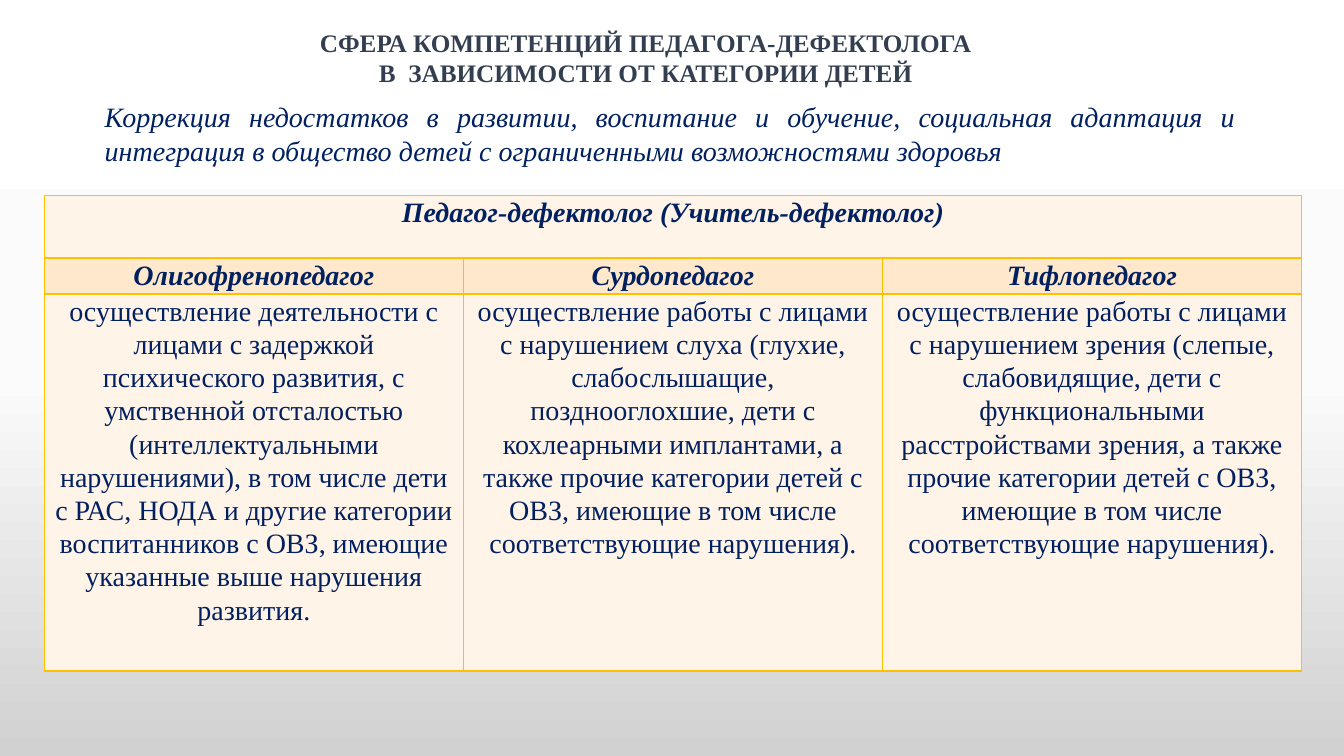
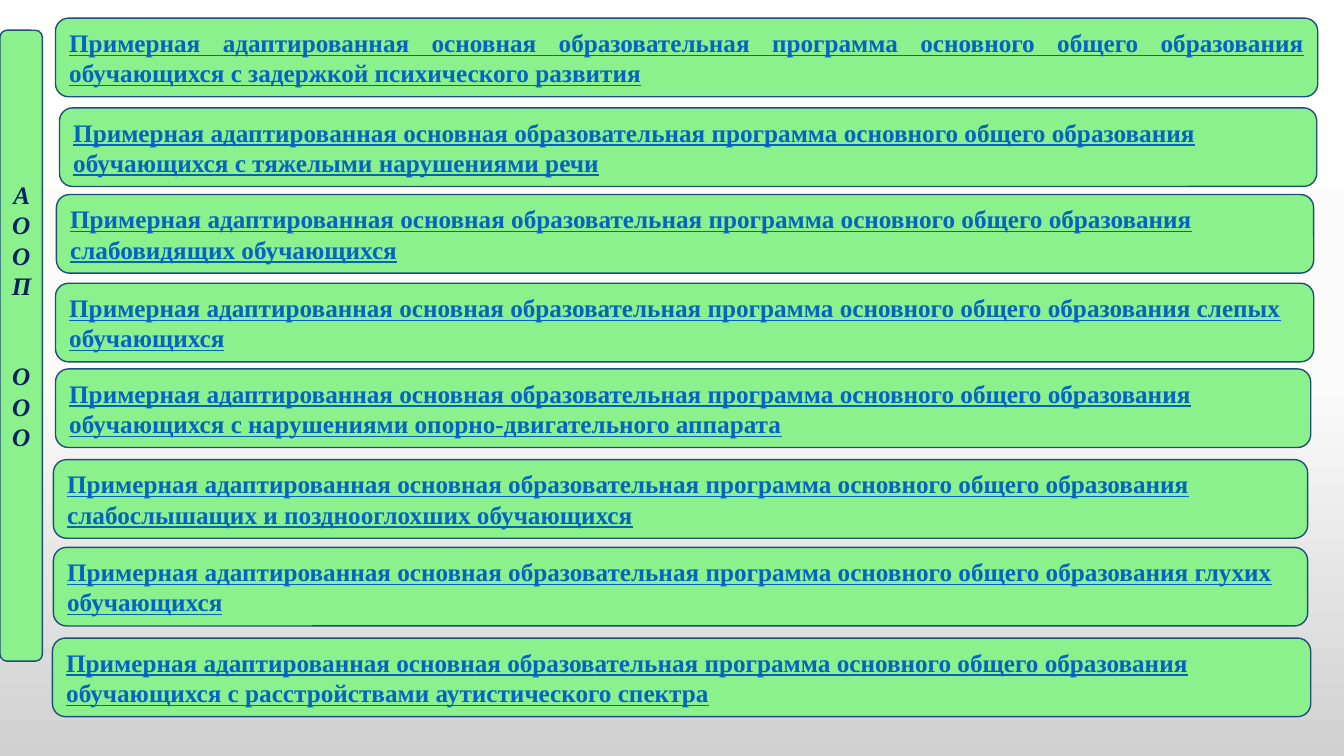
from copy import deepcopy

from lxml.etree import SubElement
from pptx import Presentation
from pptx.dml.color import RGBColor
from pptx.enum.shapes import MSO_SHAPE
from pptx.enum.text import MSO_ANCHOR, PP_ALIGN
from pptx.oxml.ns import qn
from pptx.util import Inches, Pt

FONT = "Times New Roman"
NAVY = RGBColor(0x00, 0x20, 0x60)
SLATE = RGBColor(0x33, 0x3F, 0x50)
LINK_BLUE = RGBColor(0x05, 0x63, 0xC1)
GREEN = RGBColor(0x8B, 0xF1, 0x8D)
OUTLINE = RGBColor(0x1F, 0x4E, 0x79)
GOLD = RGBColor(0xFF, 0xC0, 0x00)
CREAM = RGBColor(0xFF, 0xF4, 0xE7)
PEACH = RGBColor(0xFF, 0xE8, 0xCC)
BACKDROP = [
    (0, RGBColor(0xFF, 0xFF, 0xFF)),
    (0.5, RGBColor(0xFB, 0xFB, 0xFB)),
    (1, RGBColor(0xD1, 0xD1, 0xD1)),
]


def write(paragraph, text, size=18, color=NAVY, bold=False, italic=False,
          underline=False, align=PP_ALIGN.LEFT, line_spacing=None):
    paragraph.alignment = align
    paragraph.line_spacing = line_spacing
    run = paragraph.add_run()
    run.text = text
    font = run.font
    font.name, font.size, font.color.rgb = FONT, Pt(size), color
    font.bold, font.italic, font.underline = bold, italic, underline


def add_panel(slide, left, top, width, height):
    """Add a green rounded panel and return its text frame."""
    shape = slide.shapes.add_shape(
        MSO_SHAPE.ROUNDED_RECTANGLE,
        Inches(left), Inches(top), Inches(width), Inches(height))
    shape.shadow.inherit = False
    shape.fill.solid()
    shape.fill.fore_color.rgb = GREEN
    shape.line.color.rgb = OUTLINE
    shape.line.width = Pt(1)
    frame = shape.text_frame
    frame.word_wrap = True
    frame.vertical_anchor = MSO_ANCHOR.MIDDLE
    return frame


presentation = Presentation()
presentation.slide_width = Inches(13.33)
presentation.slide_height = Inches(7.5)
blank = presentation.slide_layouts[6]

# Shared background gradient
master = presentation.slide_master
backdrop = master.background.fill
backdrop.gradient()
backdrop.gradient_angle = 270
stop_list = next(master.element.iter(qn("a:gsLst")))
stop_list.insert(1, deepcopy(stop_list[0]))
for stop, (position, color) in zip(backdrop.gradient_stops, BACKDROP):
    stop.position = position
    stop.color.rgb = color

# Slide 1: competences by category of children
slide = presentation.slides.add_slide(blank)
headings = [
    ((3.07, 0.22, 6.67, 0.71),
     "СФЕРА КОМПЕТЕНЦИЙ ПЕДАГОГА-ДЕФЕКТОЛОГА В  ЗАВИСИМОСТИ ОТ КАТЕГОРИИ ДЕТЕЙ",
     dict(color=SLATE, bold=True, align=PP_ALIGN.CENTER)),
    ((0.94, 0.94, 11.41, 0.77),
     "Коррекция недостатков в развитии, воспитание и обучение, социальная "
     "адаптация и интеграция в общество детей с ограниченными возможностями "
     "здоровья",
     dict(size=20, italic=True, align=PP_ALIGN.JUSTIFY)),
]
for box, text, style in headings:
    frame = slide.shapes.add_textbox(*map(Inches, box)).text_frame
    frame.word_wrap = True
    write(frame.paragraphs[0], text, **style)

rows = [
    (0.62, CREAM, True, ["Педагог-дефектолог (Учитель-дефектолог)", "", ""]),
    (0.34, PEACH, True, ["Олигофренопедагог", "Сурдопедагог", "Тифлопедагог"]),
    (3.74, CREAM, False, [
        "осуществление деятельности с лицами с задержкой психического развития, "
        "с умственной отсталостью (интеллектуальными нарушениями), в том числе "
        "дети с РАС, НОДА и другие категории воспитанников с ОВЗ, имеющие "
        "указанные выше нарушения развития.",
        "осуществление работы с лицами с нарушением слуха (глухие, "
        "слабослышащие, позднооглохшие, дети с кохлеарными имплантами, а также "
        "прочие категории детей с ОВЗ, имеющие в том числе соответствующие "
        "нарушения).",
        "осуществление работы с лицами с нарушением зрения (слепые, "
        "слабовидящие, дети с функциональными расстройствами зрения, а также "
        "прочие категории детей с ОВЗ, имеющие в том числе соответствующие "
        "нарушения).",
    ]),
]
table = slide.shapes.add_table(
    3, 3, Inches(0.44), Inches(1.94), Inches(12.47), Inches(4.7)).table
table.cell(0, 0).merge(table.cell(0, 2))
for row_index, (height, fill, emphasis, texts) in enumerate(rows):
    table.rows[row_index].height = Inches(height)
    for column_index, text in enumerate(texts):
        cell = table.cell(row_index, column_index)
        cell.margin_left = cell.margin_right = Inches(0.07)
        cell.margin_top = cell.margin_bottom = 0
        properties = cell._tc.get_or_add_tcPr()
        for side in ("a:lnL", "a:lnR", "a:lnT", "a:lnB"):
            border = SubElement(properties, qn(side), w=str(Pt(1)))
            border_fill = SubElement(border, qn("a:solidFill"))
            SubElement(border_fill, qn("a:srgbClr"), val=str(GOLD))
        cell.fill.solid()
        cell.fill.fore_color.rgb = fill
        if text:
            write(cell.text_frame.paragraphs[0], text, size=20, bold=emphasis,
                  italic=emphasis, align=PP_ALIGN.CENTER, line_spacing=1.07)

# Slide 2: list of adapted programmes
slide = presentation.slides.add_slide(blank)
PROGRAMME = ("Примерная адаптированная основная образовательная программа "
             "основного общего образования ")
programmes = [
    (0.55, 0.18, 12.52, "обучающихся с задержкой психического развития"),
    (0.59, 1.07, 12.47, "обучающихся с тяжелыми нарушениями речи"),
    (0.56, 1.93, 12.47, "слабовидящих обучающихся"),
    (0.55, 2.81, 12.48, "слепых обучающихся"),
    (0.55, 3.66, 12.45, "обучающихся с нарушениями опорно-двигательного аппарата"),
    (0.53, 4.56, 12.44, "слабослышащих и позднооглохших обучающихся"),
    (0.53, 5.43, 12.44, "глухих обучающихся"),
    (0.52, 6.33, 12.48, "обучающихся с расстройствами аутистического спектра"),
]
for index, (left, top, width, learners) in enumerate(programmes):
    frame = add_panel(slide, left, top, width, 0.78)
    write(frame.paragraphs[0], PROGRAMME + learners, color=LINK_BLUE, bold=True,
          underline=True, align=PP_ALIGN.LEFT if index else PP_ALIGN.JUSTIFY)

# The narrow panel wraps its words letter by letter
frame = add_panel(slide, 0, 0.3, 0.42, 6.26)
frame.margin_bottom = Inches(0.65)
for paragraph, word in ((frame.paragraphs[0], "АООП"),
                        (frame.add_paragraph(), "ООО")):
    write(paragraph, word, bold=True, italic=True, align=PP_ALIGN.CENTER)
paragraph.space_before = Pt(43)

presentation.save("out.pptx")
